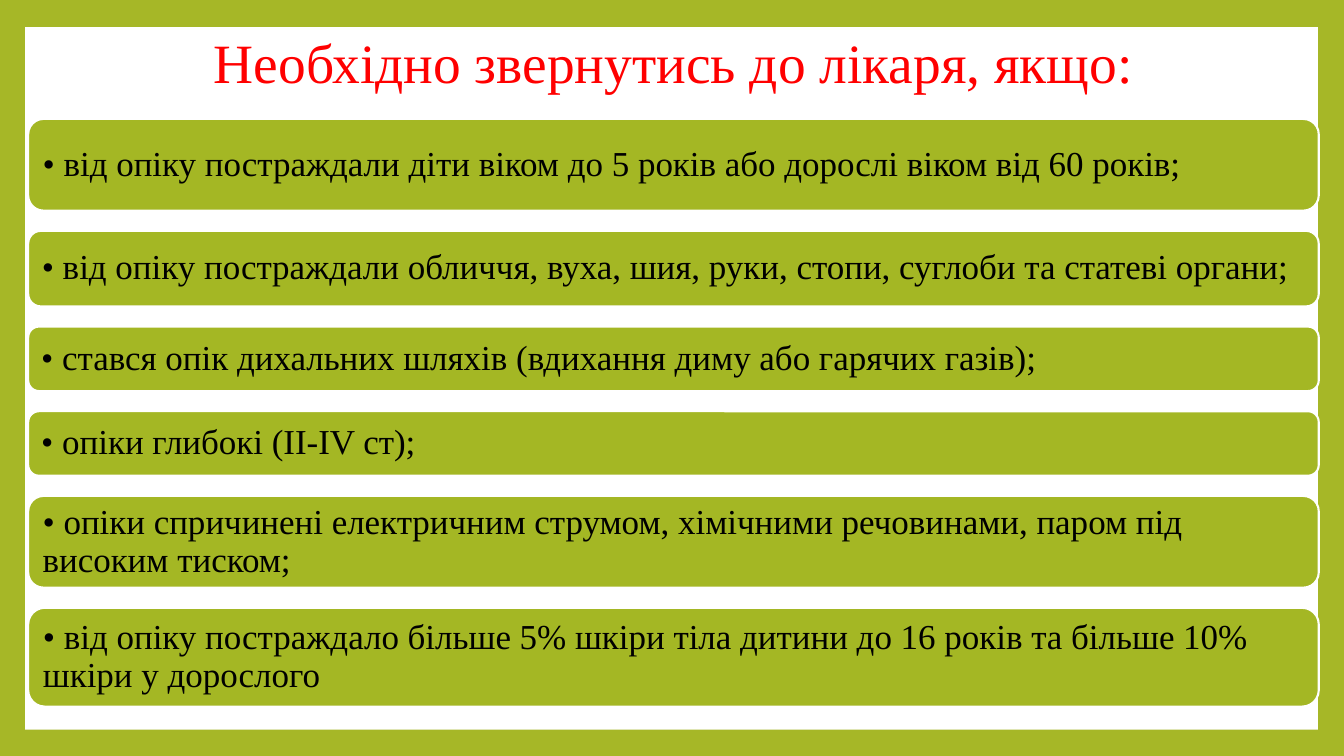
from dataclasses import dataclass

from pptx import Presentation
from pptx.dml.color import RGBColor
from pptx.enum.shapes import MSO_SHAPE
from pptx.enum.text import MSO_ANCHOR, PP_ALIGN
from pptx.shapes.autoshape import Shape
from pptx.slide import Slide
from pptx.util import Inches, Pt


@dataclass(frozen=True)
class Theme:
    font: str = "Times New Roman"
    title_size: float = 39.6
    reason_size: float = 25
    frame: RGBColor = RGBColor(0xA6, 0xB7, 0x27)
    panel: RGBColor = RGBColor(0xFF, 0xFF, 0xFF)
    bar: RGBColor = RGBColor(0xA4, 0xB7, 0x24)
    bar_outline: RGBColor = RGBColor(0xFF, 0xFF, 0xFF)
    title: RGBColor = RGBColor(0xFF, 0x00, 0x00)
    reason: RGBColor = RGBColor(0x00, 0x00, 0x00)


@dataclass(frozen=True)
class Reason:
    text: str
    height: float


THEME = Theme()
TITLE = "Необхідно звернутись до лікаря, якщо:"
REASONS = [
    Reason("• від опіку постраждали діти віком до 5 років або дорослі віком від 60 років;", 0.91),
    Reason("• від опіку постраждали обличчя, вуха, шия, руки, стопи, суглоби та статеві органи;", 0.75),
    Reason("• стався опік дихальних шляхів (вдихання диму або гарячих газів);", 0.64),
    Reason("• опіки глибокі (ІІ-ІV ст);", 0.64),
    Reason("• опіки спричинені електричним струмом, хімічними речовинами, паром під високим тиском;", 0.91),
    Reason("• від опіку постраждало більше 5% шкіри тіла дитини до 16 років та більше 10% шкіри у дорослого", 0.98),
]
BAR_LEFT, BAR_WIDTH = 0.28, 12.8
FIRST_BAR_TOP, BAR_GAP = 1.18, 0.2
BAR_ROUNDING = 0.167


def write_text(holder: Shape, text: str, size: float, color: RGBColor, align: PP_ALIGN) -> None:
    frame = holder.text_frame
    frame.text = text
    frame.word_wrap = True
    frame.vertical_anchor = MSO_ANCHOR.MIDDLE
    frame.margin_left = frame.margin_right = Inches(0.1)
    frame.margin_top = frame.margin_bottom = Inches(0.05)
    paragraph = frame.paragraphs[0]
    paragraph.alignment = align
    paragraph.line_spacing = 0.9
    font = paragraph.runs[0].font
    font.name = THEME.font
    font.size = Pt(size)
    font.color.rgb = color


def add_panel(slide: Slide) -> None:
    """Cover the green background with white, leaving a frame around the edge."""
    panel = slide.shapes.add_shape(
        MSO_SHAPE.RECTANGLE, Inches(0.25), Inches(0.27), Inches(12.82), Inches(6.97))
    panel.shadow.inherit = False
    panel.fill.solid()
    panel.fill.fore_color.rgb = THEME.panel
    panel.line.fill.background()


def add_title(slide: Slide) -> None:
    title = slide.shapes.add_textbox(Inches(1.28), Inches(0.3), Inches(10.8), Inches(0.7))
    write_text(title, TITLE, THEME.title_size, THEME.title, PP_ALIGN.CENTER)


def add_reason(slide: Slide, reason: Reason, top: float) -> None:
    bar = slide.shapes.add_shape(
        MSO_SHAPE.ROUNDED_RECTANGLE,
        Inches(BAR_LEFT), Inches(top), Inches(BAR_WIDTH), Inches(reason.height))
    bar.adjustments[0] = BAR_ROUNDING
    bar.shadow.inherit = False
    bar.fill.solid()
    bar.fill.fore_color.rgb = THEME.bar
    bar.line.color.rgb = THEME.bar_outline
    bar.line.width = Pt(1.5)
    write_text(bar, reason.text, THEME.reason_size, THEME.reason, PP_ALIGN.LEFT)


def main() -> None:
    presentation = Presentation()
    presentation.slide_width = Inches(13.33)
    presentation.slide_height = Inches(7.5)
    slide = presentation.slides.add_slide(presentation.slide_layouts[6])
    slide.background.fill.solid()
    slide.background.fill.fore_color.rgb = THEME.frame

    add_panel(slide)
    add_title(slide)
    top = FIRST_BAR_TOP
    for reason in REASONS:
        add_reason(slide, reason, top)
        top += reason.height + BAR_GAP

    presentation.save("out.pptx")


if __name__ == "__main__":
    main()
